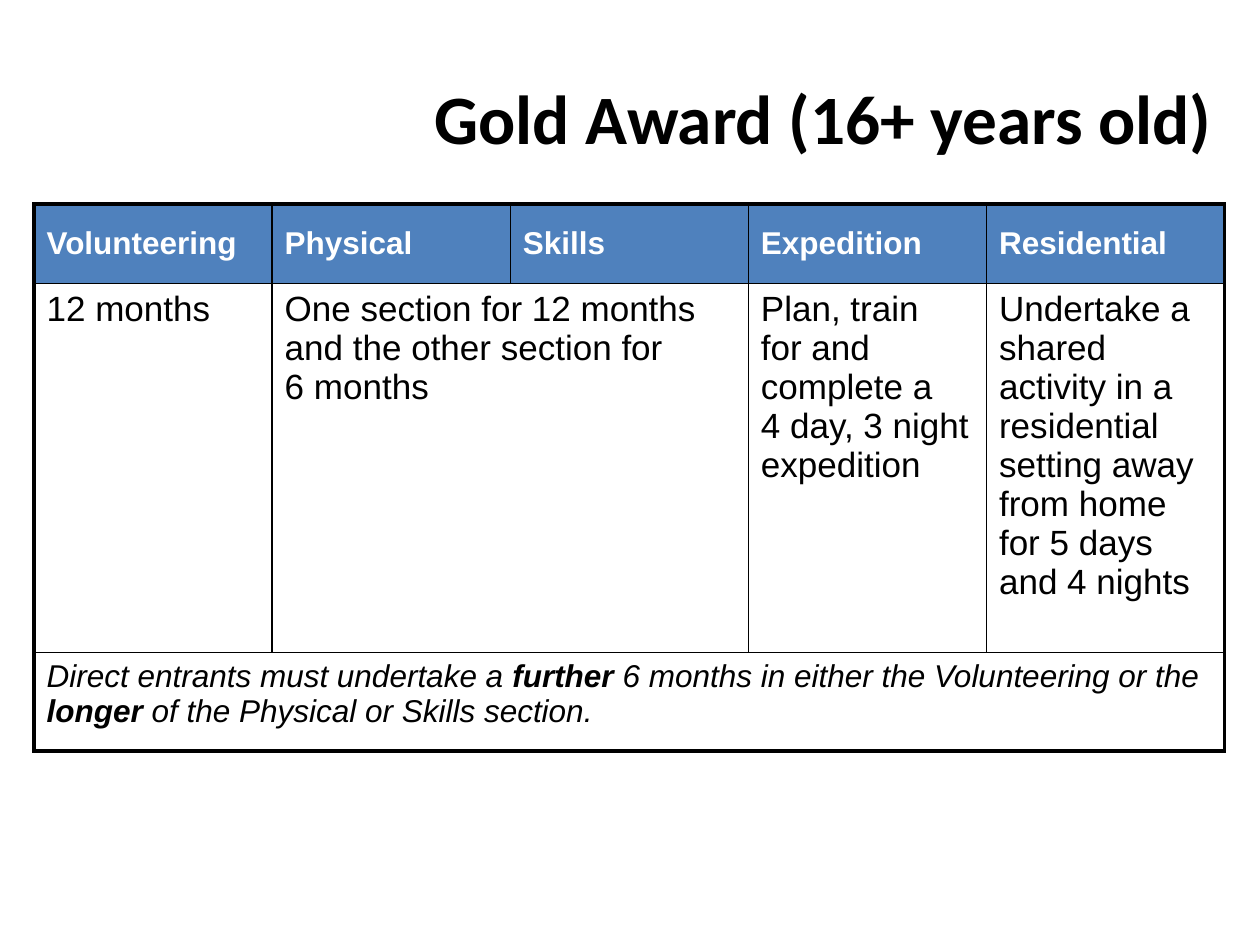
from typing import NamedTuple

from lxml.etree import SubElement
from pptx import Presentation
from pptx.dml.color import RGBColor
from pptx.enum.text import MSO_ANCHOR, PP_ALIGN
from pptx.oxml.ns import qn
from pptx.util import Inches, Pt

BLACK = RGBColor(0x00, 0x00, 0x00)
WHITE = RGBColor(0xFF, 0xFF, 0xFF)
BLUE = RGBColor(0x4F, 0x81, 0xBD)
THICK, THIN = 2.25, 1
ROWS, COLS = 3, 5


class Style(NamedTuple):
    size: float
    color: RGBColor = BLACK
    bold: bool = False
    italic: bool = False
    face: str = "Arial"


class Entry(NamedTuple):
    row: int
    col: int
    text: str
    span: int = 1


TITLE = Style(39.6, bold=True, face="Calibri")
HEAD = Style(18, WHITE, bold=True)
BODY = Style(20)
NOTE = Style(18, italic=True)
STYLES = [HEAD, BODY, NOTE]

HEADS = ["Volunteering", "Physical", "Skills", "Expedition", "Residential"]
ENTRIES = [Entry(0, col, text) for col, text in enumerate(HEADS)] + [
    Entry(1, 0, "12 months"),
    Entry(1, 1, "One section for 12 months and the other section for \v6 months", 2),
    Entry(1, 3, "Plan, train \vfor and complete a \v4 day, 3 night expedition"),
    Entry(1, 4, "Undertake a shared activity in a residential setting "
                "away from home for 5 days and 4 nights"),
]
# Every second part is bold.
PARTS = ["Direct entrants must undertake a ", "further ",
         "6 months in either the Volunteering or the ", "longer ",
         "of the Physical or Skills section."]


def set_font(para, style: Style) -> None:
    font = para.font
    font.name, font.size = style.face, Pt(style.size)
    font.bold, font.italic = style.bold, style.italic
    font.color.rgb = style.color


def add_edges(cell, row: int, col: int) -> None:
    """Draw thick lines on the outside of the table and thin ones inside."""
    outer = {"L": col == 0, "R": col + cell.span_width >= COLS if cell.is_merge_origin
             else col == COLS - 1, "T": row == 0, "B": row == ROWS - 1}
    props = cell._tc.get_or_add_tcPr()
    for side, thick in outer.items():
        line = SubElement(props, qn(f"a:ln{side}"), w=str(Pt(THICK if thick else THIN)))
        fill = SubElement(line, qn("a:solidFill"))
        SubElement(fill, qn("a:srgbClr"), val=str(BLACK))


def add_title(slide) -> None:
    box = slide.shapes.add_textbox(Inches(0.27), Inches(0), Inches(9.45), Inches(1.26))
    frame = box.text_frame
    frame.word_wrap = True
    frame.vertical_anchor = MSO_ANCHOR.BOTTOM
    frame.margin_bottom = 0
    para = frame.paragraphs[0]
    para.text = "Gold Award (16+ years old)"
    para.alignment = PP_ALIGN.RIGHT
    set_font(para, TITLE)


def add_grid(slide) -> None:
    table = slide.shapes.add_table(ROWS, COLS, Inches(0.27), Inches(1.62),
                                   Inches(9.44), Inches(4.34)).table
    table.first_row = table.horz_banding = False
    for col in table.columns:
        col.width = Inches(1.89)
    for row, height in zip(table.rows, [0.63, 2.93, 0.78]):
        row.height = Inches(height)

    for item in ENTRIES:
        cell = table.cell(item.row, item.col)
        if item.span > 1:
            cell.merge(table.cell(item.row, item.col + item.span - 1))
        para = cell.text_frame.paragraphs[0]
        para.text = item.text
        set_font(para, STYLES[item.row])

    note = table.cell(2, 0)
    note.merge(table.cell(2, COLS - 1))
    para = note.text_frame.paragraphs[0]
    for i, text in enumerate(PARTS):
        run = para.add_run()
        run.text = text
        run.font.bold = i % 2 == 1
    set_font(para, NOTE)

    for row in range(ROWS):
        for col in range(COLS):
            cell = table.cell(row, col)
            add_edges(cell, row, col)
            if row == 0:
                cell.vertical_anchor = MSO_ANCHOR.MIDDLE
                cell.fill.solid()
                cell.fill.fore_color.rgb = BLUE
            else:
                cell.fill.background()


def main() -> None:
    deck = Presentation()
    deck.slide_width, deck.slide_height = Inches(10), Inches(7.5)
    slide = deck.slides.add_slide(deck.slide_layouts[6])
    add_title(slide)
    add_grid(slide)
    deck.save("out.pptx")


if __name__ == "__main__":
    main()
